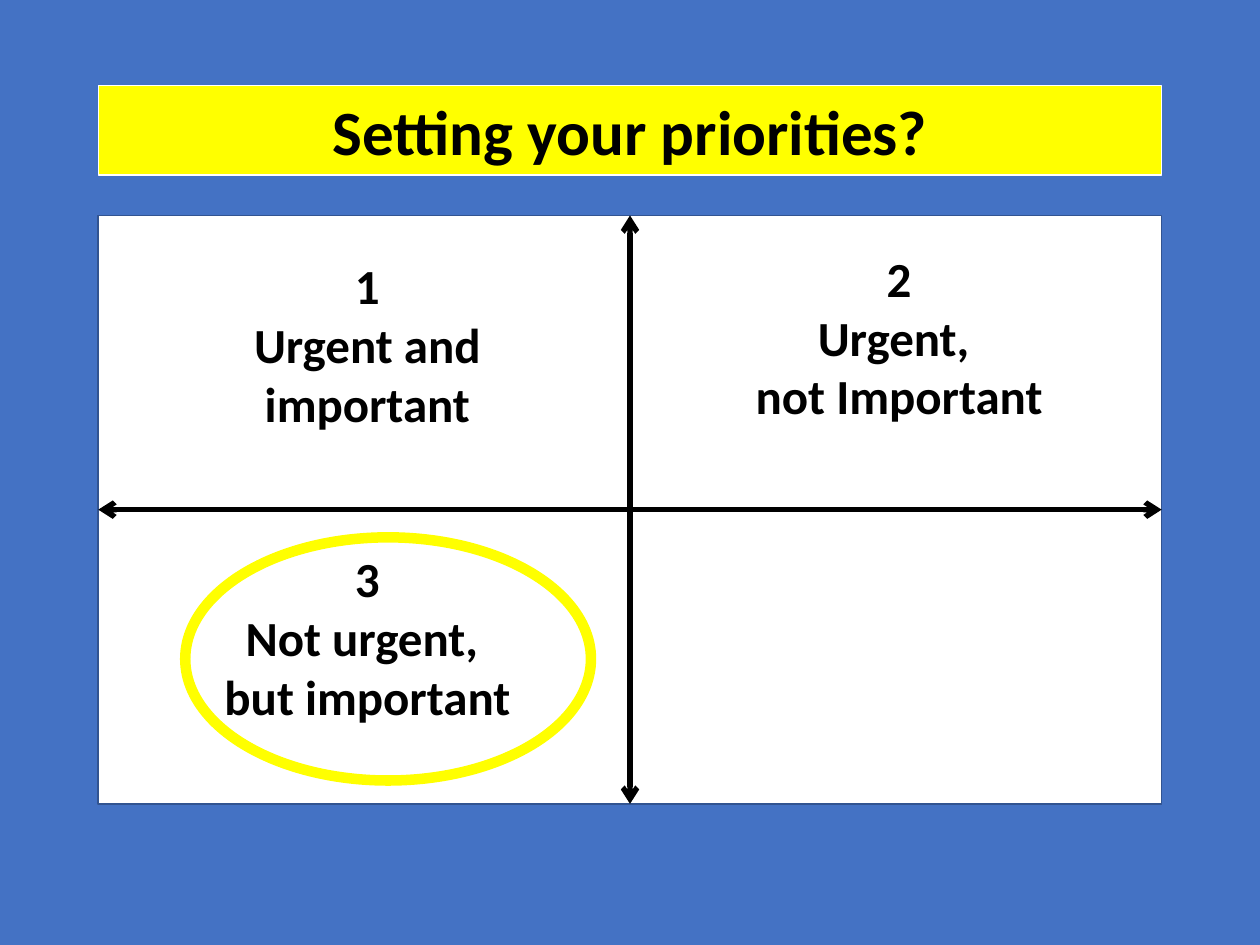
import pptx
import pptx.util
import pptx.dml.color
import pptx.enum.shapes
import pptx.enum.text
import pptx.oxml.ns
import lxml.etree

COLORS = {"blue": "4472C4", "edge": "325491", "white": "FFFFFF",
          "yellow": "FFFF00", "black": "000000"}
SLIDE_W, SLIDE_H = 10, 7.5

# Matrix: two columns and two rows, centred across the slide
LEFT, TOP, WIDTH, HEIGHT = 0.78, 1.71, 8.44, 4.67
COL_W, ROW_H = WIDTH / 2, HEIGHT / 2
LABEL_W, LABEL_H = 2.89, 1.58
LABEL_INDENT = 0.69

# Column, row, drop from the top of the cell, paragraphs
QUADRANTS = [
    (0, 0, 0.23, ["1", "Urgent and important"]),
    (1, 0, 0.17, ["2", "Urgent, ", "not Important"]),
    (0, 1, 0.22, ["3", "Not urgent, ", "but important"]),
]


def inches(*lengths):
    return [pptx.util.Inches(length) for length in lengths]


def rgb(name):
    return pptx.dml.color.RGBColor.from_string(COLORS[name])


def paint(shape, fill=None, line=None, width=1):
    if fill:
        shape.fill.solid()
        shape.fill.fore_color.rgb = rgb(fill)
    else:
        shape.fill.background()
    shape.line.color.rgb = rgb(line)
    shape.line.width = pptx.util.Pt(width)


def write(frame, paragraphs, size=28, color="black", bold=True,
          anchor=pptx.enum.text.MSO_ANCHOR.MIDDLE):
    frame.word_wrap = True
    frame.auto_size = pptx.enum.text.MSO_AUTO_SIZE.NONE
    frame.vertical_anchor = anchor
    frame.text = "\n".join(paragraphs)
    for paragraph in frame.paragraphs:
        paragraph.alignment = pptx.enum.text.PP_ALIGN.CENTER
        font = paragraph.runs[0].font
        font.name, font.size, font.bold = "Calibri", pptx.util.Pt(size), bold
        font.color.rgb = rgb(color)


def add_outline(slide, kind, box, **style):
    shape = slide.shapes.add_shape(kind, *inches(*box))
    shape.shadow.inherit = False
    paint(shape, **style)


def add_axis(slide, start, end):
    axis = slide.shapes.add_connector(
        pptx.enum.shapes.MSO_CONNECTOR.STRAIGHT, *inches(*start, *end))
    axis.line.color.rgb = rgb("black")
    axis.line.width = pptx.util.Pt(3)
    qn = pptx.oxml.ns.qn
    for tip in ("a:headEnd", "a:tailEnd"):
        lxml.etree.SubElement(axis.line._get_or_add_ln(), qn(tip), type="arrow")
    lxml.etree.SubElement(axis._element.spPr, qn("a:effectLst"))


def add_label(slide, col, row, drop, paragraphs):
    left = LEFT + col * COL_W + LABEL_INDENT
    top = TOP + row * ROW_H + drop
    label = slide.shapes.add_textbox(*inches(left, top, LABEL_W, LABEL_H))
    write(label.text_frame, paragraphs)


def set_title(slide, text):
    title = slide.shapes.title
    title.left, title.top, title.width, title.height = inches(
        LEFT, 0.68, WIDTH, 0.71)
    paint(title, fill="yellow", line="white", width=0.75)
    write(title.text_frame, [text], size=36)


def main():
    deck = pptx.Presentation()
    deck.slide_width, deck.slide_height = inches(SLIDE_W, SLIDE_H)
    slide = deck.slides.add_slide(deck.slide_layouts.get_by_name("Title Only"))
    slide.background.fill.solid()
    slide.background.fill.fore_color.rgb = rgb("blue")
    set_title(slide, "Setting your priorities?")

    # Matrix panel and its axes
    shapes = pptx.enum.shapes.MSO_SHAPE
    add_outline(slide, shapes.RECTANGLE, (LEFT, TOP, WIDTH, HEIGHT),
                fill="white", line="edge")
    middle_x, middle_y = LEFT + COL_W, TOP + ROW_H
    add_axis(slide, (middle_x, TOP), (middle_x, TOP + HEIGHT))
    add_axis(slide, (LEFT, middle_y), (LEFT + WIDTH, middle_y))

    # Quadrant labels, with a ring round the third
    for quadrant in QUADRANTS:
        add_label(slide, *quadrant)
    add_outline(slide, shapes.OVAL,
                (LEFT + LABEL_INDENT, middle_y + 0.22, 3.22, 1.93),
                line="yellow", width=6)

    deck.save("out.pptx")


if __name__ == "__main__":
    main()
